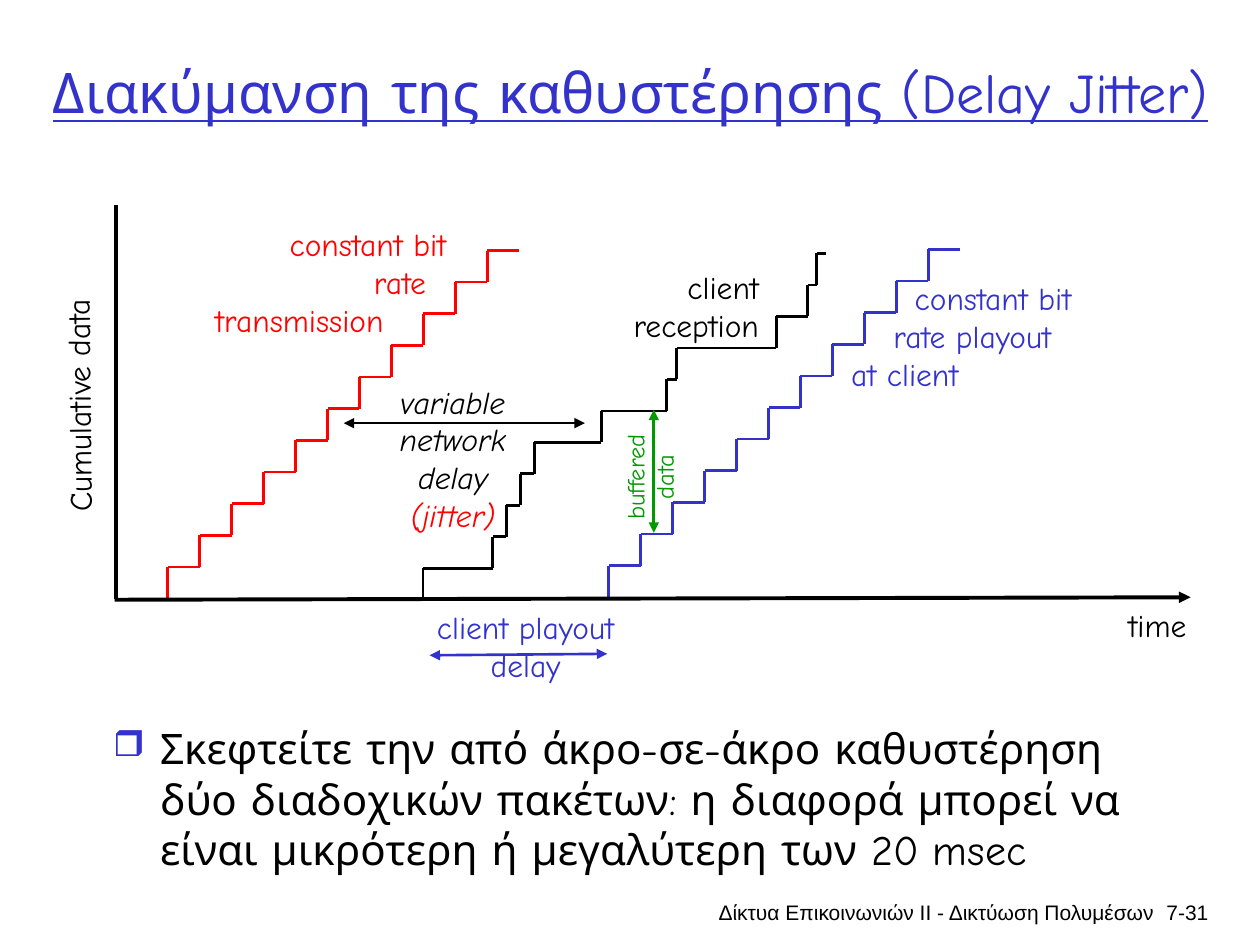
from dataclasses import dataclass

from lxml import etree
from pptx import Presentation
from pptx import util as u
from pptx.dml.color import RGBColor
from pptx.enum import shapes, text
from pptx.oxml import ns

BLACK, RED, BLUE, GREEN = "000000", "FF0000", "3333CC", "009900"
LEFT, CENTER, RIGHT = text.PP_ALIGN.LEFT, text.PP_ALIGN.CENTER, text.PP_ALIGN.RIGHT
STEPS = 11


@dataclass
class Staircase:
    edges: list[float]  # x of each riser, then the end of the last tread
    bottom: float
    top: float
    color: str


@dataclass
class Arrow:
    start: tuple[float, float]
    end: tuple[float, float]
    color: str = BLACK
    width: float = 1.5
    heads: tuple[str, ...] = ("headEnd", "tailEnd")


@dataclass
class Label:
    lines: tuple[str, ...]
    place: tuple[float, float, float, float]
    color: str = BLACK
    size: float = 18
    align: text.PP_ALIGN = LEFT
    indents: tuple[float, ...] = ()
    rotation: float = 0
    italic: bool = False
    wrap: bool = False
    accent: str = ""  # colour of the last line, when it differs


def rgb(color: str) -> RGBColor:
    return RGBColor.from_string(color)


def even_edges(start: float, end: float) -> list[float]:
    return [start + (end - start) * i / STEPS for i in range(STEPS + 1)]


def draw_line(page, arrow: Arrow) -> None:
    points = [u.Cm(value) for value in arrow.start + arrow.end]
    line = page.shapes.add_connector(shapes.MSO_CONNECTOR.STRAIGHT, *points)
    line.line.color.rgb = rgb(arrow.color)
    line.line.width = u.Pt(arrow.width)
    outline = line.line._get_or_add_ln()
    for head in arrow.heads:
        etree.SubElement(outline, ns.qn(f"a:{head}"), type="triangle")
    etree.SubElement(line._element.spPr, ns.qn("a:effectLst"))


def draw_staircase(page, stairs: Staircase) -> None:
    rise = (stairs.bottom - stairs.top) / STEPS
    for i, (left, right) in enumerate(zip(stairs.edges, stairs.edges[1:])):
        low = stairs.bottom - i * rise
        high = low - rise
        draw_line(page, Arrow((left, high), (left, low), stairs.color, heads=()))
        draw_line(page, Arrow((right, high), (left, high), stairs.color, heads=()))


def add_box(page, place, wrap: bool = True, anchor=text.MSO_ANCHOR.TOP):
    box = page.shapes.add_textbox(*[u.Cm(value) for value in place])
    box.text_frame.word_wrap = wrap
    box.text_frame.vertical_anchor = anchor
    return box


def write(para, words: str, *, size: float, color: str = BLACK,
          font: str = "Comic Neue", align=LEFT, italic: bool = False,
          underline: bool = False) -> None:
    para.alignment = align
    span = para.add_run()
    span.text = words
    span.font.name = font
    span.font.size = u.Pt(size)
    span.font.color.rgb = rgb(color)
    span.font.italic = italic
    span.font.underline = underline


def draw_label(page, label: Label) -> None:
    box = add_box(page, label.place, label.wrap)
    box.rotation = label.rotation
    for i, words in enumerate(label.lines):
        para = box.text_frame.paragraphs[0] if i == 0 else box.text_frame.add_paragraph()
        if label.indents:
            para._p.get_or_add_pPr().set("marL", str(u.Cm(label.indents[i])))
        last = i == len(label.lines) - 1
        write(para, words, size=label.size, align=label.align, italic=label.italic,
              color=label.accent if last and label.accent else label.color)


def add_bullet(para, symbol: str, color: str, hanging: float) -> None:
    props = para._p.get_or_add_pPr()
    props.set("marL", str(u.Cm(hanging)))
    props.set("indent", str(-u.Cm(hanging)))
    bullet_color = etree.SubElement(props, ns.qn("a:buClr"))
    etree.SubElement(bullet_color, ns.qn("a:srgbClr"), val=color)
    etree.SubElement(props, ns.qn("a:buSzPct"), val="85000")
    etree.SubElement(props, ns.qn("a:buChar"), char=symbol)


STAIRCASES = [
    Staircase(even_edges(3.38, 10.47), 12.07, 5.05, RED),
    Staircase([8.53, 9.93, 10.21, 10.49, 10.77, 12.12, 13.44, 13.64,
               15.65, 16.28, 16.46, 16.66], 12.09, 5.11, BLACK),
    Staircase(even_edges(12.27, 19.36), 12.04, 5.03, BLUE),
]

ARROWS = [
    Arrow((2.34, 4.14), (2.34, 12.07), width=2.25, heads=()),
    Arrow((24, 12.04), (2.31, 12.09), width=2.25, heads=("headEnd",)),
    Arrow((6.93, 8.53), (11.79, 8.53)),
    Arrow((8.66, 13.21), (12.24, 13.18), BLUE),
    Arrow((13.18, 10.74), (13.18, 8.26), GREEN),
]

LABELS = [
    Label(("constant bit", "rate", "transmission"), (4.09, 4.42, 5.64, 2.54), RED,
          indents=(1.5, 3.2, 0), wrap=True),
    Label(("Cumulative data",), (-1.14, 7.34, 5.44, 1.02), rotation=269.4, wrap=True),
    Label(("time",), (22.5, 12.09, 1.83, 1.02)),
    Label(("variable", "network", "delay", "(jitter)"), (7.67, 7.59, 2.92, 3.3),
          align=CENTER, italic=True, accent=RED),
    Label(("client", "reception"), (12.22, 5.28, 3.33, 1.78), align=RIGHT),
    Label(("constant bit", "rate playout", "at client"), (16.71, 5.51, 5.64, 2.54), BLUE,
          indents=(1.48, 1.05, 0.2), wrap=True),
    Label(("client playout", "delay"), (8.26, 12.14, 4.67, 1.78), BLUE,
          align=CENTER, wrap=True),
    Label(("buffered", "data"), (11.79, 8.89, 2.62, 1.45), GREEN, 14, CENTER, rotation=270),
]

FOOTERS = [
    ("Δίκτυα Επικοινωνιών ΙΙ - Δικτύωση Πολυμέσων", (11.53, 18.01, 11.99, 1.27)),
    ("7-31", (22.73, 18.01, 1.88, 1.27)),
]


def main() -> None:
    deck = Presentation()
    deck.slide_width, deck.slide_height = u.Cm(25.4), u.Cm(19.05)
    page = deck.slides.add_slide(deck.slide_layouts[6])

    # Diagram
    for stairs in STAIRCASES:
        draw_staircase(page, stairs)
    for arrow in ARROWS:
        draw_line(page, arrow)
    for label in LABELS:
        draw_label(page, label)

    # Title
    title = add_box(page, (0.81, 0.64, 24.59, 2.41), anchor=text.MSO_ANCHOR.MIDDLE)
    write(title.text_frame.paragraphs[0], "Διακύμανση της καθυστέρησης (Delay Jitter)",
          size=32, color=BLUE, underline=True)

    # Bulleted remark
    body = add_box(page, (2.03, 14.45, 21.59, 3.43))
    remark = body.text_frame.paragraphs[0]
    add_bullet(remark, "❒", BLUE, 0.95)
    write(remark, "Σκεφτείτε την από άκρο-σε-άκρο καθυστέρηση δύο διαδοχικών πακέτων: "
          "η διαφορά μπορεί να είναι μικρότερη ή μεγαλύτερη των 20 msec", size=24)

    # Footer and page number
    for words, place in FOOTERS:
        box = add_box(page, place)
        write(box.text_frame.paragraphs[0], words, size=12, font="Arial", align=RIGHT)

    deck.save("out.pptx")


if __name__ == "__main__":
    main()
